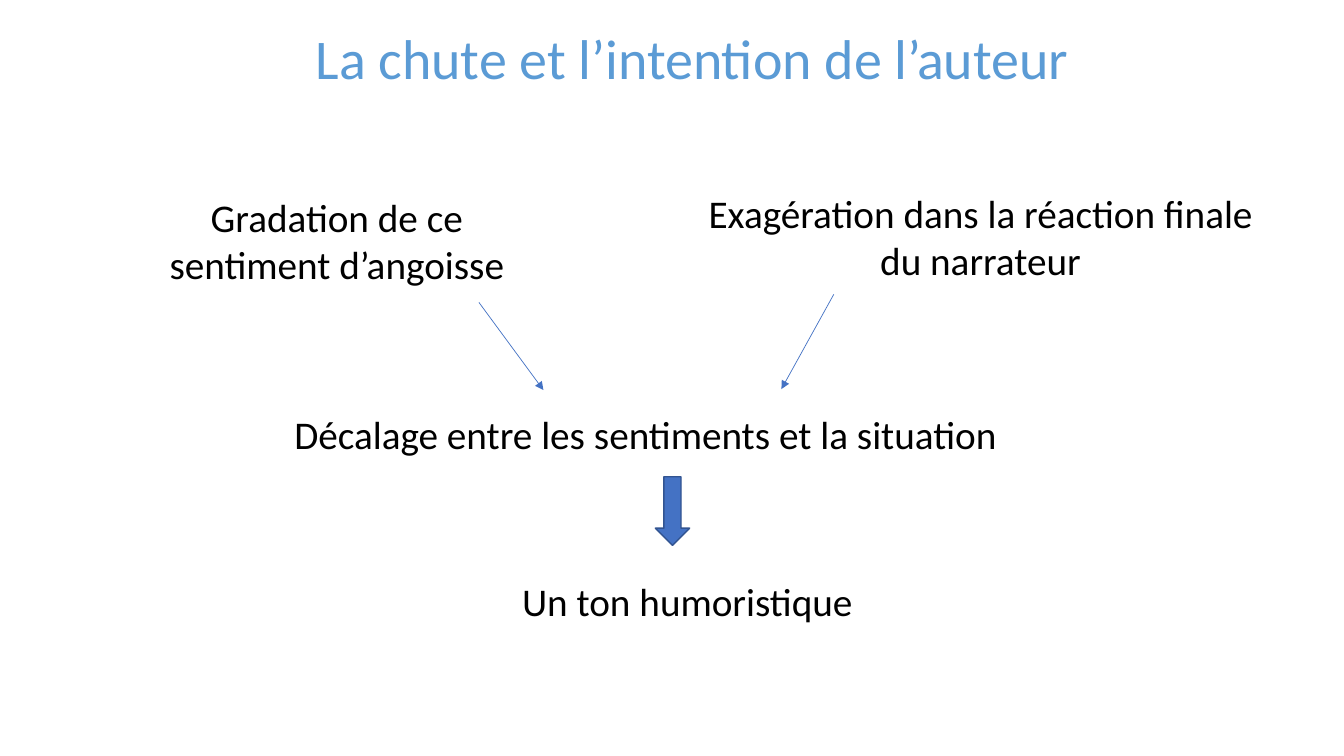
from dataclasses import dataclass

from lxml.etree import SubElement
from pptx import Presentation
from pptx.dml.color import RGBColor
from pptx.enum.shapes import MSO_CONNECTOR, MSO_SHAPE
from pptx.enum.text import MSO_ANCHOR, PP_ALIGN
from pptx.oxml.ns import qn
from pptx.util import Pt

EMU_PER_PX = 9144


@dataclass(frozen=True)
class Theme:
    font: str = "Calibri"
    title_size: int = 40
    body_size: int = 28
    title_color: str = "5B9BD5"
    text_color: str = "000000"
    accent: str = "4472C4"
    accent_edge: str = "325491"
    connector_width: float = 0.5
    edge_width: float = 1


def px(*lengths):
    return [length * EMU_PER_PX for length in lengths]


class SlideBuilder:
    def __init__(self, deck, theme):
        self.theme = theme
        self.slide = deck.slides.add_slide(deck.slide_layouts[5])

    def set_text(self, frame, text, size, color, align):
        frame.word_wrap = True
        frame.vertical_anchor = MSO_ANCHOR.TOP
        frame.text = text
        para = frame.paragraphs[0]
        para.alignment = align
        for span in para.runs:
            span.font.name = self.theme.font
            span.font.size = Pt(size)
            span.font.color.rgb = RGBColor.from_string(color)

    def title(self, text, left, top, width, height):
        box = self.slide.shapes.title
        box.left, box.top, box.width, box.height = px(left, top, width, height)
        self.set_text(box.text_frame, text, self.theme.title_size,
                      self.theme.title_color, PP_ALIGN.CENTER)

    def label(self, text, left, top, width, height, align=PP_ALIGN.LEFT):
        box = self.slide.shapes.add_textbox(*px(left, top, width, height))
        self.set_text(box.text_frame, text, self.theme.body_size,
                      self.theme.text_color, align)

    def arrow(self, start, end):
        connector = self.slide.shapes.add_connector(
            MSO_CONNECTOR.STRAIGHT, *px(*start, *end))
        connector.line.color.rgb = RGBColor.from_string(self.theme.accent)
        connector.line.width = Pt(self.theme.connector_width)
        properties = connector.element.spPr
        SubElement(properties.find(qn("a:ln")), qn("a:tailEnd"), type="triangle")
        SubElement(properties, qn("a:effectLst"))

    def block_arrow(self, left, top, width, height):
        shape = self.slide.shapes.add_shape(
            MSO_SHAPE.DOWN_ARROW, *px(left, top, width, height))
        shape.shadow.inherit = False
        shape.fill.solid()
        shape.fill.fore_color.rgb = RGBColor.from_string(self.theme.accent)
        shape.line.color.rgb = RGBColor.from_string(self.theme.accent_edge)
        shape.line.width = Pt(self.theme.edge_width)


def main():
    deck = Presentation()
    deck.slide_width, deck.slide_height = px(1333, 750)
    page = SlideBuilder(deck, Theme())

    page.title("La chute et l’intention de l’auteur", 194, 18, 985, 77)
    page.label("Gradation de ce sentiment d’angoisse",
               135, 187, 398, 104, PP_ALIGN.CENTER)
    page.label("Exagération dans la réaction finale du narrateur",
               689, 183, 567, 104, PP_ALIGN.CENTER)
    page.label("Décalage entre les sentiments et la situation",
               282, 402, 755, 57)
    page.label("Un ton humoristique", 508, 568, 425, 57)
    page.arrow((475, 300), (539, 387))
    page.arrow((827, 292), (775, 386))
    page.block_arrow(650, 473, 34, 68)

    deck.save("out.pptx")


if __name__ == "__main__":
    main()
